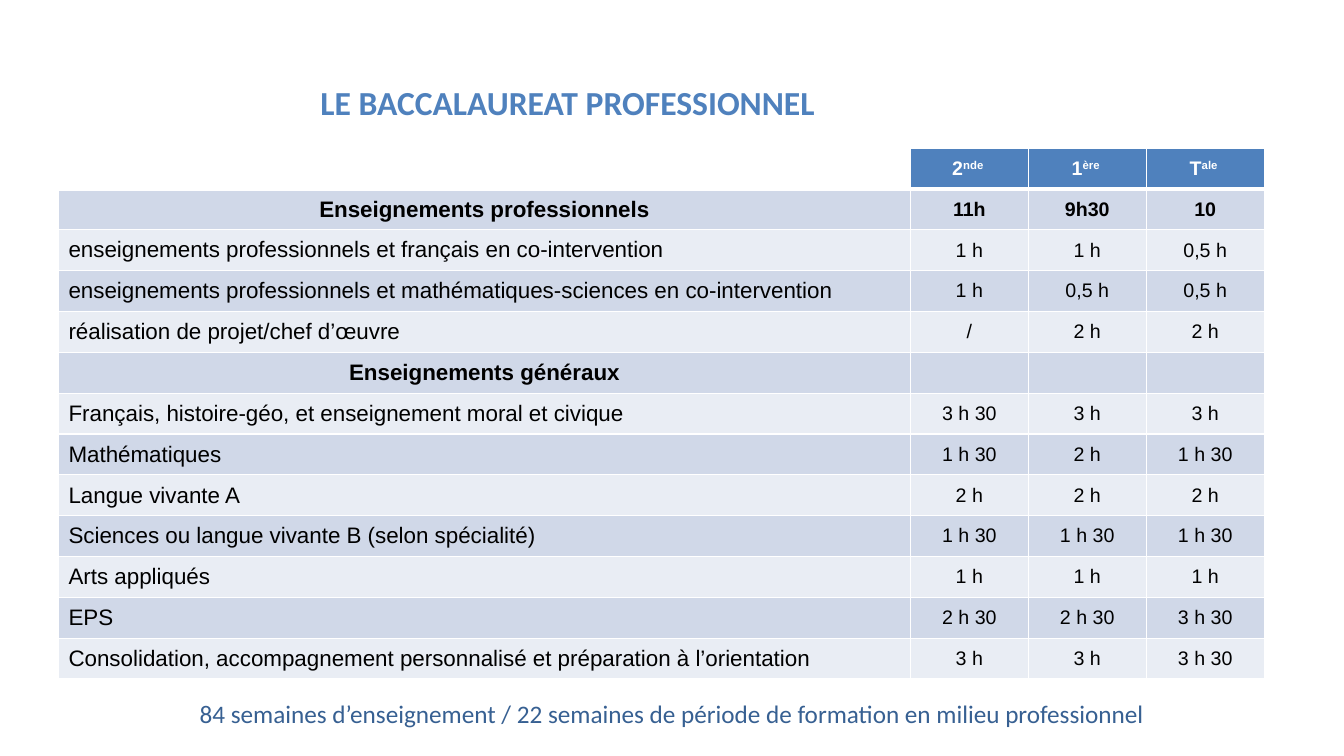
import pptx
import pptx.util
import pptx.dml.color
import pptx.enum.text
import pptx.oxml
import pptx.oxml.ns
import lxml.etree

Inches = pptx.util.Inches
Pt = pptx.util.Pt
CENTER = pptx.enum.text.PP_ALIGN.CENTER
LEFT = pptx.enum.text.PP_ALIGN.LEFT
MIDDLE = pptx.enum.text.MSO_ANCHOR.MIDDLE


def style(font, name, size, color, bold=False):
    font.name = name
    font.size = Pt(size)
    font.bold = bold
    font.color.rgb = pptx.dml.color.RGBColor.from_string(color)


def add_border(cell, side, points):
    line = lxml.etree.SubElement(
        cell._tc.get_or_add_tcPr(), pptx.oxml.ns.qn("a:ln" + side), w=str(Pt(points)))
    solid = lxml.etree.SubElement(line, pptx.oxml.ns.qn("a:solidFill"))
    lxml.etree.SubElement(solid, pptx.oxml.ns.qn("a:srgbClr"), val="FFFFFF")


deck = pptx.Presentation()
deck.slide_width = Inches(13.33)
deck.slide_height = Inches(7.5)
page = deck.slides.add_slide(deck.slide_layouts[6])

captions = [
    ("LE BACCALAUREAT PROFESSIONNEL", (0.28, 0.76, 10.7, 0.5), 24, "4F81BD", True),
    ("84 semaines d’enseignement / 22 semaines de période de formation en milieu professionnel",
     (1.31, 6.88, 10.71, 0.4), 18, "376092", False),
]
for text, place, size, color, bold in captions:
    box = page.shapes.add_textbox(*map(Inches, place))
    box.text_frame.word_wrap = True
    para = box.text_frame.paragraphs[0]
    para.text = text
    para.alignment = CENTER
    style(para.font, "Calibri", size, color, bold)

levels = [("2", "nde "), ("1", "ère "), ("T", "ale ")]
subjects = [
    ("Enseignements professionnels", "11h", "9h30", "10"),
    ("enseignements professionnels et français en co-intervention", "1 h", "1 h", "0,5 h"),
    ("enseignements professionnels et mathématiques-sciences en co-intervention",
     "1 h", "0,5 h", "0,5 h"),
    ("réalisation de projet/chef d’œuvre", "/", "2 h", "2 h"),
    ("Enseignements généraux", "", "", ""),
    ("Français, histoire-géo, et enseignement moral et civique", "3 h 30", "3 h", "3 h"),
    ("Mathématiques", "1 h 30", "2 h", "1 h 30"),
    ("Langue vivante A", "2 h", "2 h", "2 h"),
    ("Sciences ou langue vivante B (selon spécialité)", "1 h 30", "1 h 30", "1 h 30"),
    ("Arts appliqués", "1 h", "1 h", "1 h"),
    ("EPS", "2 h 30", "2 h 30", "3 h 30"),
    ("Consolidation, accompagnement personnalisé et préparation à l’orientation",
     "3 h", "3 h", "3 h 30"),
]
section_rows = (1, 5)
row_count = len(subjects) + 1
table_height = Inches(5.27)

timetable = page.shapes.add_table(
    row_count, 4, Inches(0.58), Inches(1.47), Inches(11.97), table_height).table
for index, width in enumerate([8.45, 1.17, 1.17, 1.17]):
    timetable.columns[index].width = Inches(width)

for row_index, row in enumerate(timetable.rows):
    row.height = table_height // row_count
    for column_index, cell in enumerate(row.cells):
        for side in "LRTB":
            under_header = (row_index, side) in ((0, "B"), (1, "T"))
            add_border(cell, side, 3 if under_header else 1)
        cell.vertical_anchor = MIDDLE
        para = cell.text_frame.paragraphs[0]
        para.alignment = CENTER
        if row_index == 0:
            if column_index == 0:
                cell.fill.background()
                continue
            fill = "4F81BD"
            style(para.font, "Arial", 14, "FFFFFF", True)
            base, suffix = levels[column_index - 1]
            para.add_run().text = base
            span = para.add_run()
            span.text = suffix
            span.font._element.set("baseline", "30000")
        else:
            fill = "D0D8E8" if row_index % 2 else "E9EDF4"
            is_section = row_index in section_rows
            para.text = subjects[row_index - 1][column_index]
            style(para.font, "Arial", 14 if column_index else 16, "000000", is_section)
            if column_index == 0 and not is_section:
                para.alignment = LEFT
        cell.fill.solid()
        cell.fill.fore_color.rgb = pptx.dml.color.RGBColor.from_string(fill)

deck.save("out.pptx")
